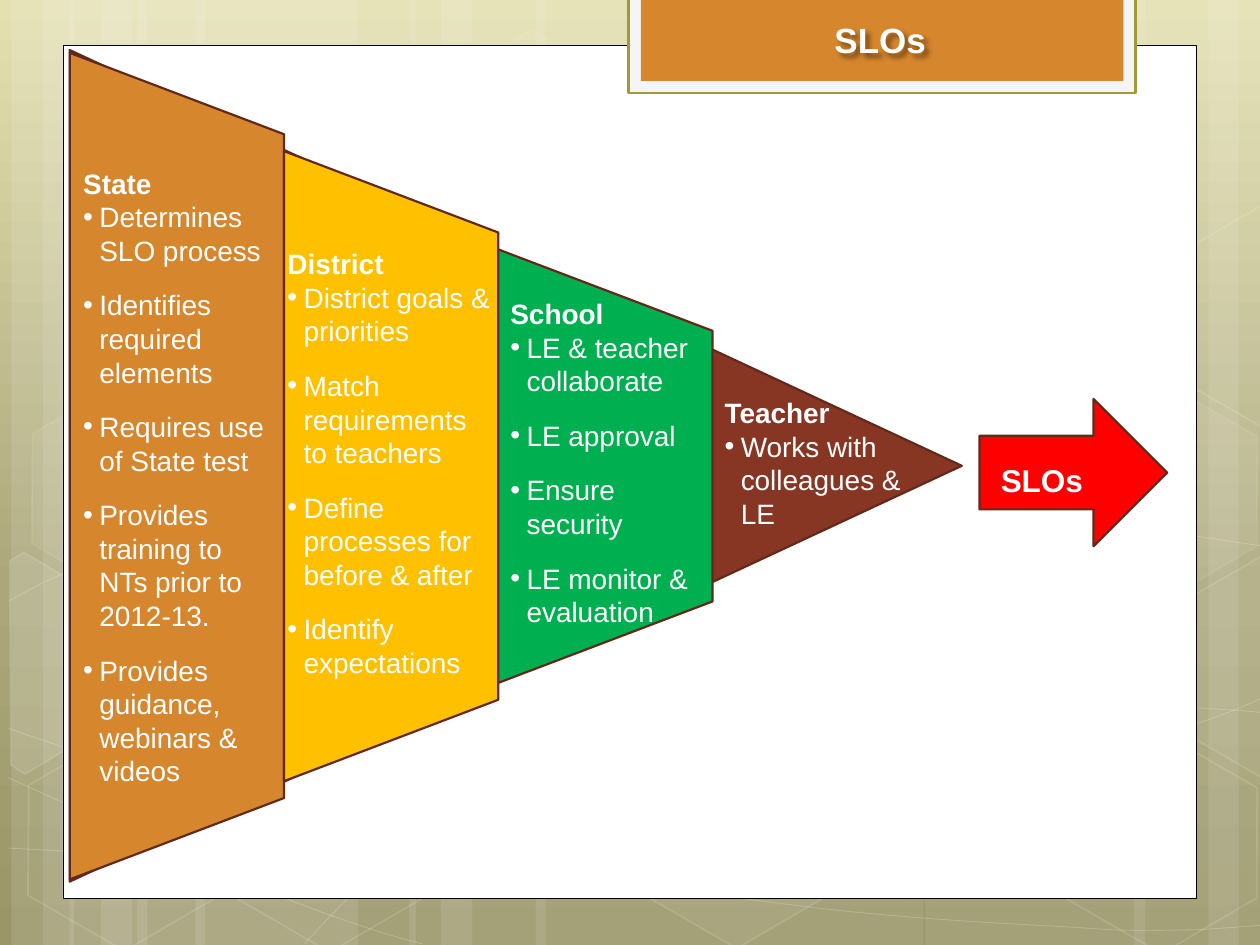
import math
from copy import deepcopy
from dataclasses import dataclass
from typing import Optional

from lxml import etree
from pptx import Presentation
from pptx import util as u
from pptx.dml.color import RGBColor
from pptx.enum import shapes, text
from pptx.oxml.ns import qn

Pt = u.Pt
Kind = shapes.MSO_SHAPE
WIDTH, HEIGHT = 720, 540
WHITE, BROWN, ORANGE = "FFFFFF", "64281B", "D6862D"
MIDDLE = 266.4        # vertical centre of the funnel
STAGE_WIDTH = 122.4
TILT = 30             # rotation of the hexagons, in degrees


@dataclass
class Look:
    fill: Optional[str] = None
    line: Optional[str] = None
    weight: float = 1
    fill_opacity: int = 100
    line_opacity: int = 100


@dataclass
class Box:
    left: float
    top: float
    width: float
    height: float


@dataclass
class Stage:
    title: str
    bullets: list[str]
    colour: str
    box: Box


def colour(value: str) -> RGBColor:
    return RGBColor.from_string(value)


def paint(fill, value: Optional[str], opacity: int) -> None:
    if value is None:
        fill.background()
        return
    fill.solid()
    fill.fore_color.rgb = colour(value)
    if opacity < 100:
        element = fill._xPr.xpath("a:solidFill/a:srgbClr")[0]
        etree.SubElement(element, qn("a:alpha"), val=str(opacity * 1000))


def style(shape, look: Look) -> None:
    shape.shadow.inherit = False
    paint(shape.fill, look.fill, look.fill_opacity)
    paint(shape.line.fill, look.line, look.line_opacity)
    if look.line:
        shape.line.width = Pt(look.weight)


def add_preset(slide, kind, box: Box, look: Look, rotation: float = 0, adjustment: Optional[float] = None):
    shape = slide.shapes.add_shape(kind, Pt(box.left), Pt(box.top), Pt(box.width), Pt(box.height))
    shape.rotation = rotation
    if adjustment is not None:
        shape.adjustments[0] = adjustment
    style(shape, look)
    return shape


def add_outline(slide, points: list[tuple], look: Look, close: bool):
    (x, y), *others = [(Pt(px), Pt(py)) for px, py in points]
    builder = slide.shapes.build_freeform(x, y)
    builder.add_line_segments(others, close=close)
    shape = builder.convert_to_shape()
    style(shape, look)
    return shape


def add_curve(slide, controls: list[tuple], look: Look) -> None:
    """Draw cubic curves: a start, then three points for each."""
    shape = add_outline(slide, controls, look, close=False)
    segments = list(shape._element.iter(qn("a:lnTo")))
    for first in range(0, len(segments), 3):
        cubic = etree.Element(qn("a:cubicBezTo"))
        segments[first].addprevious(cubic)
        for segment in segments[first:first + 3]:
            cubic.append(segment[0])
            segment.getparent().remove(segment)


def turn(point: tuple, centre: tuple, degrees: float) -> tuple:
    angle = math.radians(degrees)
    x, y = point[0] - centre[0], point[1] - centre[1]
    return (centre[0] + x * math.cos(angle) - y * math.sin(angle),
            centre[1] + x * math.sin(angle) + y * math.cos(angle))


def add_text(slide, box: Box, title: str, size: float, bullets: list[str] = (), centred: bool = False):
    shape = slide.shapes.add_textbox(Pt(box.left), Pt(box.top), Pt(box.width), Pt(box.height))
    frame = shape.text_frame
    frame.word_wrap = True
    for index, words in enumerate([title, *bullets]):
        paragraph = frame.add_paragraph() if index else frame.paragraphs[0]
        run = paragraph.add_run()
        run.text = words
        formats = {"name": "Arial", "size": Pt(size), "bold": index == 0}
        for name, value in formats.items():
            setattr(run.font, name, value)
        run.font.color.rgb = colour(WHITE)
        if centred:
            paragraph.alignment = text.PP_ALIGN.CENTER
        if index:
            paragraph.space_after = Pt(12)
            properties = paragraph._p.get_or_add_pPr()
            properties.set("marL", str(Pt(9.25)))
            properties.set("indent", str(-Pt(9.25)))
            etree.SubElement(properties, qn("a:buFont"), typeface="Arial")
            etree.SubElement(properties, qn("a:buChar"), char="•")
    return shape


def add_shadow(shape) -> None:
    effects = etree.SubElement(shape._element.spPr, qn("a:effectLst"))
    shadow = etree.SubElement(effects, qn("a:outerShdw"), blurRad="38100", dist="38100", dir="2700000")
    black = etree.SubElement(shadow, qn("a:srgbClr"), val="000000")
    etree.SubElement(black, qn("a:alpha"), val="43000")


def add_background(slide) -> None:
    # Gradient
    fill = slide.background.fill
    fill.gradient()
    fill.gradient_angle = 270
    stop_list = fill._fill._gradFill.find(qn("a:gsLst"))
    stop_list.append(deepcopy(stop_list[-1]))
    for stop, (position, value) in zip(stop_list, [(0, "E4E0B2"), (62, "ABA77B"), (100, "9A9669")]):
        stop.set("pos", str(position * 1000))
        for child in list(stop):
            stop.remove(child)
        etree.SubElement(stop, qn("a:srgbClr"), val=value)

    # Vertical bands
    for left, width in [(78.5, 126), (6.5, 36), (24.5, 59.8), (111.6, 126), (39.6, 36), (57.6, 59.8),
                        (528.5, 126), (690.5, 36), (648, 59.8), (306, 221.8), (234, 36), (252, 59.8)]:
        add_preset(slide, Kind.RECTANGLE, Box(left, 0, width, HEIGHT), Look(WHITE, fill_opacity=10))

    # Thin curves
    curves = [
        [(5, 484.6), (43.9, 486.7), (82.8, 488.9), (136.8, 488.2), (190.8, 487.4), (257.8, 486), (329.8, 478.8),
         (401.8, 471.6), (504, 457.9), (570.2, 444.2), (635.8, 430.6), (703.4, 409), (725, 396.7)],
        [(5, 343.4), (25.9, 331.9), (46.8, 321.1), (87.1, 310.3), (128.2, 299.5), (186.5, 283.7), (249.8, 278.6),
         (313.9, 273.6), (391.7, 272.9), (470.9, 278.6), (550.1, 284.4), (681.8, 306.7), (725, 312.5)],
        [(4.3, 444.2), (91.4, 483.8), (177.8, 523.4), (241.2, 539.3)],
        [(5, 416.2), (27.4, 424.1), (50.4, 432), (92.2, 443.5), (133.9, 454.3), (196.6, 472.3), (257, 484.6),
         (316.8, 496.8), (392.4, 509.8), (452.2, 517), (511.9, 524.9), (576, 527.8), (614.2, 529.9),
         (652.3, 532.8), (661.7, 531.4), (680.4, 531.4), (699.1, 530.6), (712.1, 529.2), (725, 528.5)],
        [(174.2, 539.3), (187.2, 524.9), (200.2, 510.5), (217.4, 497.5), (234.7, 483.8), (259.2, 470.2),
         (279.4, 460.1), (299.5, 450), (311.8, 445.7), (337.7, 438.5), (364.3, 431.3), (412.6, 421.2),
         (437.8, 416.2), (463.7, 411.1), (467.3, 411.1), (489.6, 409.7), (511.9, 407.5), (547.2, 405.4),
         (571.7, 404.6), (596.9, 403.9), (637.9, 404.6), (637.9, 404.6), (654, 404.6), (670, 404.6),
         (686.2, 404.6), (699.1, 405.4), (711.4, 406.1), (717.8, 406.8), (724.3, 407.5), (722, 406.8),
         (724.3, 407.5)],
    ]
    for controls in curves:
        add_curve(slide, controls, Look(None, WHITE, 0.5, line_opacity=20))

    # Hexagons, whole and cut by the slide edge
    for left, top, fill_opacity, line_opacity in [
            (240.5, 25.9, 4, 8), (357.8, 424.1, 6, 12), (7.9, 425.5, 0, 12), (10.1, 224.6, 7, 8),
            (125.3, 426.2, 0, 12), (542.2, 326.2, 10, 12), (600.5, 427, 0, 12), (600.5, 226.1, 7, 8)]:
        look = Look(WHITE if fill_opacity else None, WHITE, 1, fill_opacity, line_opacity)
        add_preset(slide, Kind.HEXAGON, Box(left, top, 126, 109.4), look, TILT, 0.285)
    left_cut = [(5.8, 320.4), (13.7, 315.4), (69.1, 347.8), (68.4, 410.4), (14.4, 442.1), (6.5, 437)]
    right_cut = [(666.7, 349.2), (721.4, 317.5), (726.5, 321.1), (726.5, 441.4), (721.4, 444.2), (666.7, 412.6)]
    upper_cut = [(x, y - 200.3) for x, y in right_cut]
    for points, centre, opacity in [(left_cut, (25.9, 385.9), 10), (right_cut, (709.2, 374.4), 4),
                                    (upper_cut, (709.2, 174.1), 0)]:
        look = Look(WHITE if opacity else None, WHITE, 1, opacity, 12)
        level = [turn(point, centre, -TILT) for point in points]
        add_outline(slide, level, look, close=True).rotation = TILT


def main() -> None:
    presentation = Presentation()
    presentation.slide_width, presentation.slide_height = Pt(WIDTH), Pt(HEIGHT)
    slide = presentation.slides.add_slide(presentation.slide_layouts[6])
    add_background(slide)
    # White panel and title plate
    add_preset(slide, Kind.RECTANGLE, Box(36, 26, 648, 487.5), Look(WHITE, "000000", 0.5))
    add_preset(slide, Kind.RECTANGLE, Box(359.2, -1.7, 289.7, 55), Look("F5F5F5", "A39A36", 1.25))
    add_preset(slide, Kind.RECTANGLE, Box(366.2, -2.9, 275.8, 49.2), Look(ORANGE))
    # Funnel: a triangle behind three narrowing stages, then the arrow
    add_preset(slide, Kind.ISOSCELES_TRIANGLE, Box(57.1, 11.3, 475.2, 509.8), Look("873624", BROWN, 1.25), 90)
    stages = [
        Stage("State", ["Determines SLO process", "Identifies required elements", "Requires use of State test",
                        "Provides training to NTs prior to 2012-13.", "Provides guidance, webinars & videos"],
              ORANGE, Box(40.5, 91.4, 122.4, 365.8)),
        Stage("District", ["District goals & priorities", "Match requirements to teachers",
                           "Define processes for before & after", "Identify expectations"],
              "FFC000", Box(157.2, 137.5, 132.5, 257)),
        Stage("School", ["LE & teacher collaborate", "LE approval", "Ensure security", "LE monitor & evaluation"],
              "00B050", Box(284.6, 166, 129.6, 198.7)),
    ]
    for index, stage in enumerate(stages):
        length = 472.3 - 112.3 * index
        box = Box(101.1 + STAGE_WIDTH * index - length / 2, MIDDLE - STAGE_WIDTH / 2, length, STAGE_WIDTH)
        add_preset(slide, Kind.TRAPEZOID, box, Look(stage.colour, BROWN, 1.25), 90, 0.38)
    add_preset(slide, Kind.RIGHT_ARROW, Box(559.7, 228, 107.3, 84.2), Look("FF0000", BROWN, 1.25))
    # Wording
    for stage in stages:
        add_text(slide, stage.box, stage.title, 16, stage.bullets)
    add_text(slide, Box(407, 222.5, 122.4, 116.6), "Teacher", 16, ["Works with colleagues & LE"])
    add_text(slide, Box(564.8, 260, 86.4, 28.8), "SLOs", 18)
    add_shadow(add_text(slide, Box(373, 7.2, 260, 31.7), "SLOs", 20, centred=True))
    presentation.save("out.pptx")


if __name__ == "__main__":
    main()
